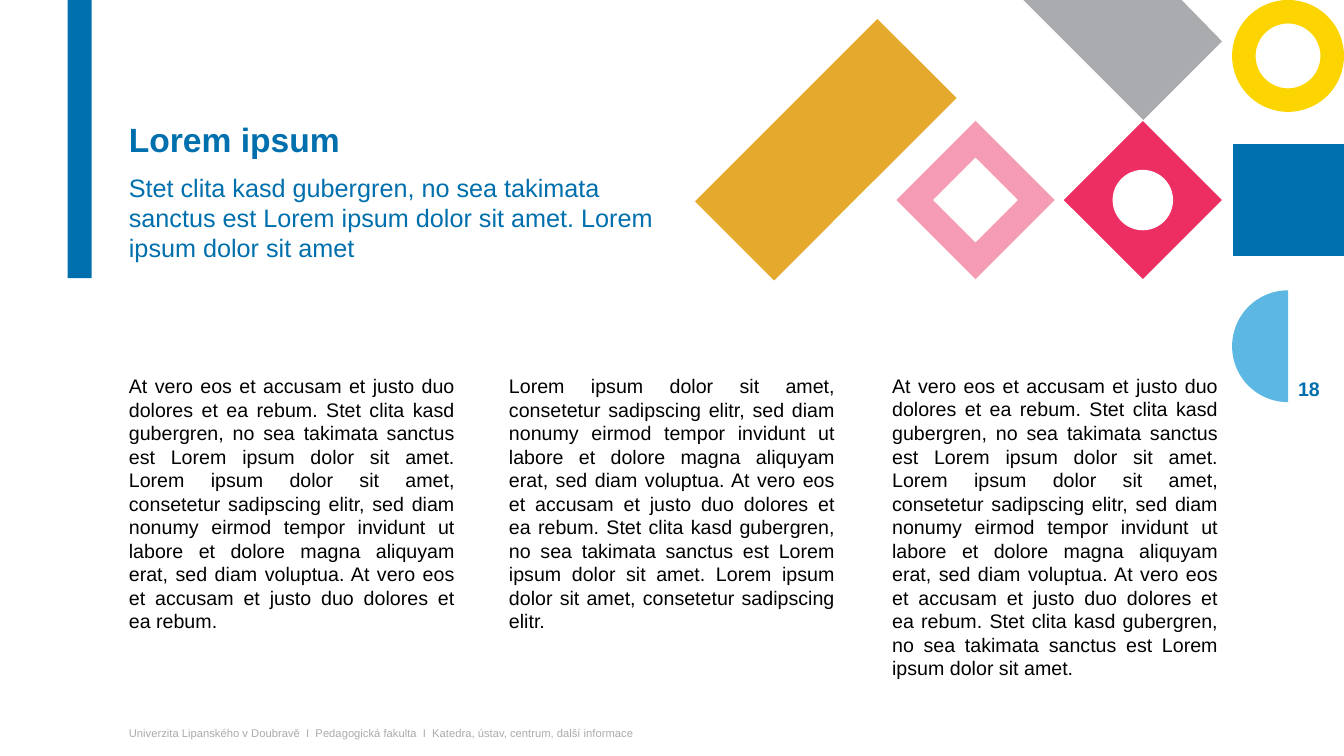
from pptx import Presentation
from pptx.dml.color import RGBColor
from pptx.enum.shapes import MSO_SHAPE
from pptx.enum.text import MSO_ANCHOR, PP_ALIGN
from pptx.util import Inches, Pt

BLUE = RGBColor(0x00, 0x6F, 0xAD)
LIGHT_BLUE = RGBColor(0x5C, 0xB8, 0xE2)
GREY = RGBColor(0xA9, 0xAB, 0xAE)
YELLOW = RGBColor(0xFC, 0xD5, 0x00)
RED = RGBColor(0xED, 0x2E, 0x62)
PINK = RGBColor(0xF5, 0x9B, 0xB3)
OCHRE = RGBColor(0xE5, 0xAA, 0x2D)
WHITE = RGBColor(0xFF, 0xFF, 0xFF)
BLACK = RGBColor(0x00, 0x00, 0x00)

FONT = "Arial"
TILE = 1.11
MARGIN = 1.18

VERO = "At vero eos et accusam et justo duo dolores et ea rebum."
STET = ("Stet clita kasd gubergren, no sea takimata sanctus est "
        "Lorem ipsum dolor sit amet.")
LOREM = ("Lorem ipsum dolor sit amet, consetetur sadipscing elitr, sed diam nonumy "
         "eirmod tempor invidunt ut labore et dolore magna aliquyam erat, sed diam voluptua.")
CLOSING = "Lorem ipsum dolor sit amet, consetetur sadipscing elitr."

COLUMNS = [
    (MARGIN, 2.69, [VERO, STET, LOREM, VERO]),
    (4.95, 2.69, [LOREM, VERO, STET, CLOSING]),
    (8.75, 3.16, [VERO, STET, LOREM, VERO, STET]),
]


def paint(shape, color):
    """Give a shape a flat fill without line or shadow."""
    shape.shadow.inherit = False
    shape.fill.solid()
    shape.fill.fore_color.rgb = color
    shape.line.fill.background()


def add_block(slide, kind, left, top, width, height, color, rotation=0, adjustments=()):
    """Add one flat preset shape."""
    shape = slide.shapes.add_shape(
        kind, Inches(left), Inches(top), Inches(width), Inches(height))
    shape.rotation = rotation
    for index, value in enumerate(adjustments):
        shape.adjustments[index] = value
    paint(shape, color)


def add_text(slide, text, left, top, width, height, size=14, color=BLACK, bold=False,
             align=PP_ALIGN.LEFT, anchor=MSO_ANCHOR.TOP, wrap=True, before=0, spacing=None):
    """Add a text box with one formatted paragraph."""
    box = slide.shapes.add_textbox(Inches(left), Inches(top), Inches(width), Inches(height))
    frame = box.text_frame
    frame.word_wrap = wrap
    frame.vertical_anchor = anchor
    paragraph = frame.paragraphs[0]
    paragraph.alignment = align
    paragraph.space_before = Pt(before)
    paragraph.line_spacing = spacing
    run = paragraph.add_run()
    run.text = text
    run.font.name = FONT
    run.font.size = Pt(size)
    run.font.bold = bold
    run.font.color.rgb = color


def add_pattern(slide, left, top):
    """Draw the geometric pattern whose top left corner is given."""
    row = top + 1.43
    edge = left + 5.31
    corners = [(3.24, 0), (4.81, 0), (5.21, 0.41), (4.43, 1.19)]
    points = [(Inches(left + x), Inches(top + y)) for x, y in corners]
    builder = slide.shapes.build_freeform(*points[0])
    builder.add_line_segments(points[1:], close=True)
    paint(builder.convert_to_shape(), GREY)

    add_block(slide, MSO_SHAPE.RECTANGLE, left, top + 0.93, 2.56, TILE, OCHRE, 315)
    add_block(slide, MSO_SHAPE.FRAME, left + 2.21, row, TILE, TILE, PINK, 45, [0.23])
    add_block(slide, MSO_SHAPE.RECTANGLE, left + 3.87, row, TILE, TILE, RED, 45)
    hole = 0.6
    inset = (TILE - hole) / 2
    add_block(slide, MSO_SHAPE.OVAL, left + 3.87 + inset, row + inset, hole, hole, WHITE)

    add_block(slide, MSO_SHAPE.DONUT, edge, top, TILE, TILE, YELLOW, 0, [0.21])
    add_block(slide, MSO_SHAPE.RECTANGLE, edge + 0.01, row, TILE, TILE, BLUE)
    add_block(slide, MSO_SHAPE.PIE, edge, top + 2.88, TILE, TILE, LIGHT_BLUE, 0, [54, 162])


def add_heading(slide, left, top, width):
    """Place the side bar, the title and the subtitle."""
    add_block(slide, MSO_SHAPE.RECTANGLE, left - 0.51, 0, 0.24, 2.76, BLUE)
    add_text(slide, "Lorem ipsum", left, top, width, 0.46,
             size=24, color=BLUE, bold=True, spacing=0.9)
    add_text(slide, f"{STET} Lorem ipsum dolor sit amet", left, top + 0.48, width, 1.01,
             size=18, color=BLUE, before=3)


def add_columns(slide, top, width):
    """Place the three justified text columns."""
    for left, height, sentences in COLUMNS:
        add_text(slide, " ".join(sentences), left, top, width, height,
                 align=PP_ALIGN.JUSTIFY, before=3)


def add_footer(slide, left, top, width):
    """Place the footer line and the page number."""
    add_text(slide, "Univerzita Lipanského v Doubravě  I  Pedagogická fakulta  I  "
             "Katedra, ústav, centrum, další informace", left, top, width, 0.24,
             size=8, color=GREY, anchor=MSO_ANCHOR.MIDDLE)
    add_text(slide, "18", 12.75, 3.69, 0.44, 0.34, color=BLUE, bold=True,
             align=PP_ALIGN.RIGHT, anchor=MSO_ANCHOR.MIDDLE, wrap=False)


def main():
    """Build the slide and save it."""
    presentation = Presentation()
    presentation.slide_width = Inches(13.33)
    presentation.slide_height = Inches(7.5)
    slide = presentation.slides.add_slide(presentation.slide_layouts[6])
    add_pattern(slide, 6.91, 0)
    add_footer(slide, MARGIN, 7.15, 5.49)
    add_columns(slide, 3.66, 3.43)
    add_heading(slide, MARGIN, 1.18, 5.49)
    presentation.save("out.pptx")


if __name__ == "__main__":
    main()
